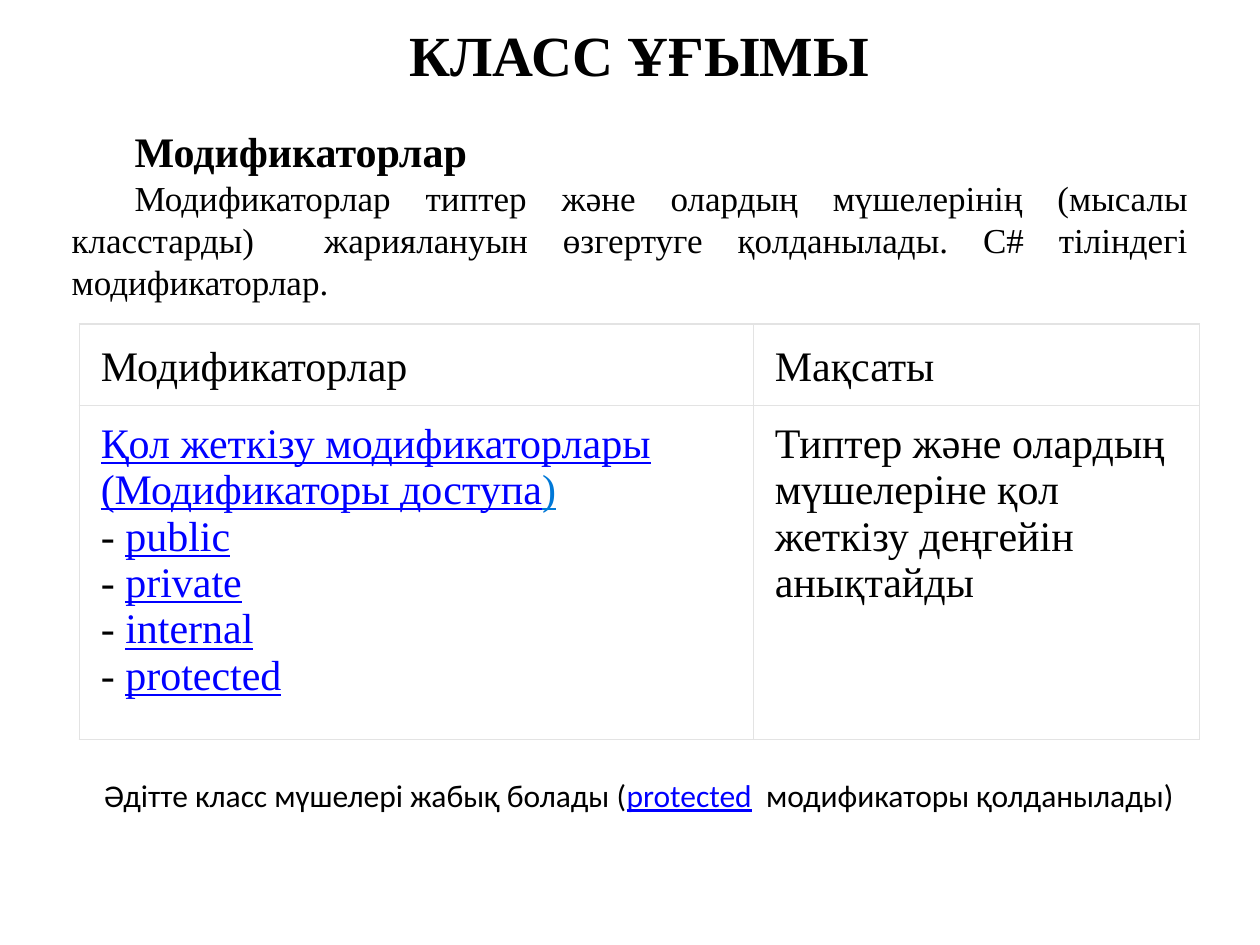
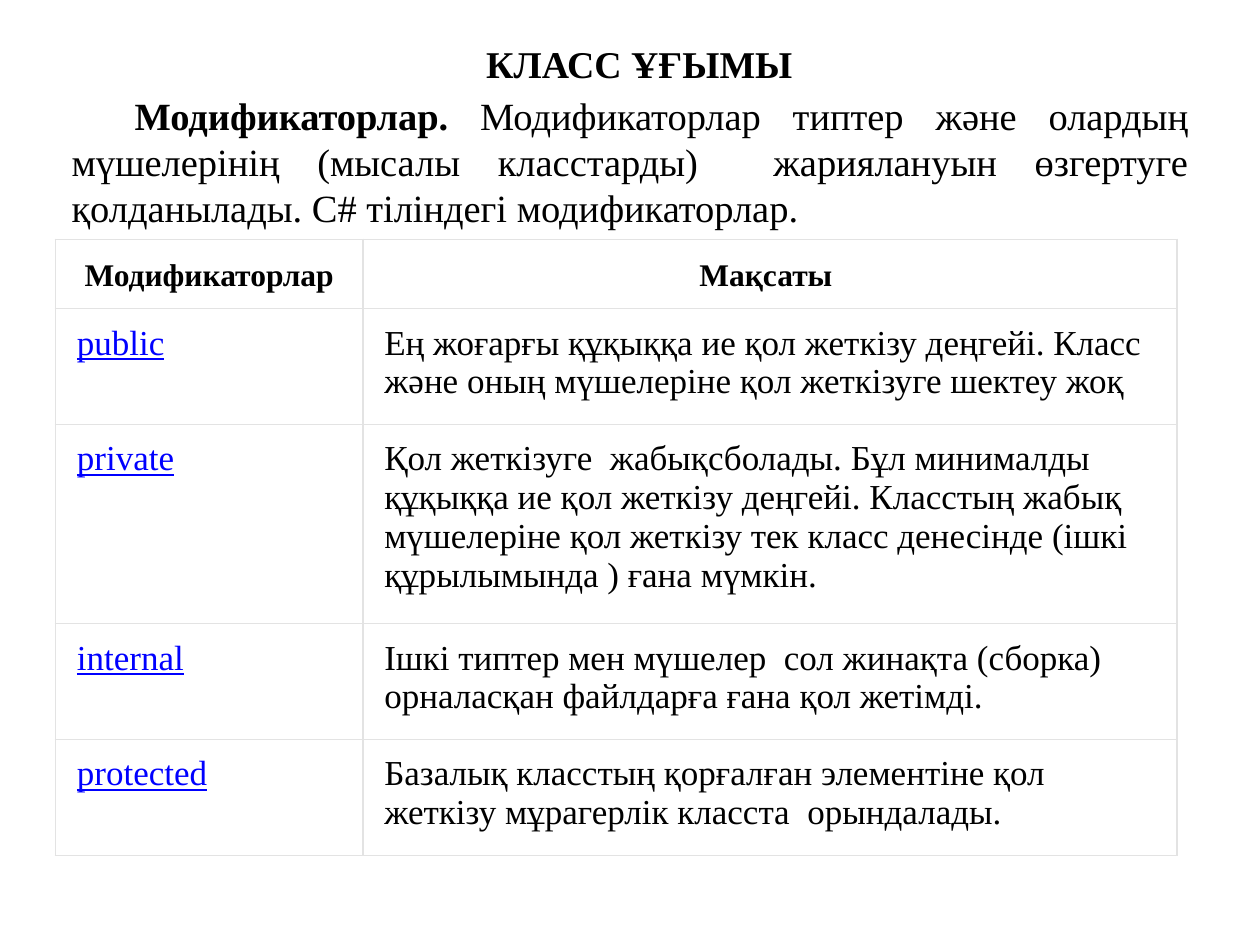
import pptx
import pptx.util
import pptx.dml.color
import pptx.enum.text
import pptx.oxml
import pptx.oxml.ns

COLORS = {
    "text": "000000",
    "link": "0000FF",
    "bracket": "0078D7",
    "cell": "FFFFFF",
    "border": "E3E3E3",
}
SERIF = "Times New Roman"
SANS = "Calibri"
ALIGN = pptx.enum.text.PP_ALIGN
ANCHOR = pptx.enum.text.MSO_ANCHOR
FIT = pptx.enum.text.MSO_AUTO_SIZE

HEADING = "КЛАСС ҰҒЫМЫ"
MODIFIERS = "Модификаторлар"
PURPOSE = "Мақсаты"
INTRO = ("Модификаторлар типтер және олардың мүшелерінің (мысалы класстарды)  "
         "жариялануын өзгертуге қолданылады. C# тіліндегі модификаторлар. ")
ACCESS_LEVELS = {
    "public": "Ең жоғарғы құқыққа ие қол жеткізу деңгейі. Класс және оның "
              "мүшелеріне қол жеткізуге шектеу жоқ",
    "private": "Қол жеткізуге  жабықсболады. Бұл минималды құқыққа ие қол жеткізу "
               "деңгейі. Класстың жабық мүшелеріне қол жеткізу тек класс денесінде "
               "(ішкі құрылымында ) ғана мүмкін.",
    "internal": "Ішкі типтер мен мүшелер  сол жинақта (сборка) орналасқан "
                "файлдарға ғана қол жетімді.",
    "protected": "Базалық класстың қорғалған элементіне қол жеткізу мұрагерлік "
                 "класста  орындалады.",
}


class Deck:
    """Builds styled slides on a grid of 100 columns by 75 rows."""

    def __init__(self):
        self.show = pptx.Presentation()
        self.show.slide_width = pptx.util.Inches(10)
        self.show.slide_height = pptx.util.Inches(7.5)
        self.slide = None

    def across(self, columns):
        return round(self.show.slide_width * columns / 100)

    def down(self, rows):
        return round(self.show.slide_height * rows / 75)

    def box(self, at):
        left, top, width, height = at
        return self.across(left), self.down(top), self.across(width), self.down(height)

    def runs(self, paragraph, parts, size, font=SERIF):
        for text, look in parts:
            for number, line in enumerate(text.split("\n")):
                if number:
                    paragraph.add_line_break()
                if not line:
                    continue
                run = paragraph.add_run()
                run.text = line
                run.font.size = pptx.util.Pt(size)
                run.font.name = font
                run.font.bold = look == "bold"
                run.font.underline = look in ("link", "bracket")
                run.font.color.rgb = pptx.dml.color.RGBColor.from_string(
                    COLORS.get(look, COLORS["text"]))

    def new_slide(self, top, height, size):
        self.slide = self.show.slides.add_slide(self.show.slide_layouts[5])
        title = self.slide.shapes.title
        title.left, title.top, title.width, title.height = self.box((3.1, top, 95.3, height))
        frame = title.text_frame
        frame.auto_size = FIT.NONE
        frame.vertical_anchor = ANCHOR.TOP
        heading = frame.paragraphs[0]
        heading.alignment = ALIGN.CENTER
        self.runs(heading, [(HEADING, "bold")], size)

    def text(self, at, paragraphs, font=SERIF, indent=0):
        frame = self.slide.shapes.add_textbox(*self.box(at)).text_frame
        frame.word_wrap = True
        frame.auto_size = FIT.SHAPE_TO_FIT_TEXT
        for number, (parts, size, align) in enumerate(paragraphs):
            paragraph = frame.add_paragraph() if number else frame.paragraphs[0]
            paragraph.alignment = align
            paragraph._p.get_or_add_pPr().set("indent", str(self.across(indent)))
            self.runs(paragraph, parts, size, font)

    def border(self, cell, side, points):
        line = pptx.oxml.parse_xml(
            f'<a:{side} {pptx.oxml.ns.nsdecls("a")} w="{pptx.util.Pt(points)}">'
            f'<a:solidFill><a:srgbClr val="{COLORS["border"]}"/></a:solidFill></a:{side}>')
        properties = cell._tc.get_or_add_tcPr()
        properties.insert(("lnL", "lnR", "lnT", "lnB").index(side), line)

    def table(self, left, top, columns, heights, rows, sizes, header_align):
        at = self.box((left, top, sum(columns), sum(heights)))
        grid = self.slide.shapes.add_table(len(rows), len(columns), *at).table
        grid.first_row = grid.horz_banding = False
        for column, width in zip(grid.columns, columns):
            column.width = self.across(width)
        last = len(rows) - 1
        for r, (height, row) in enumerate(zip(heights, rows)):
            grid.rows[r].height = self.down(height)
            for c, parts in enumerate(row):
                cell = grid.cell(r, c)
                cell.fill.solid()
                cell.fill.fore_color.rgb = pptx.dml.color.RGBColor.from_string(COLORS["cell"])
                cell.margin_left = cell.margin_right = self.across(1.7)
                cell.margin_top = cell.margin_bottom = self.down(1.2)
                cell.vertical_anchor = ANCHOR.TOP if r else ANCHOR.BOTTOM
                paragraph = cell.text_frame.paragraphs[0]
                paragraph.alignment = ALIGN.LEFT if r else header_align
                self.runs(paragraph, parts, sizes[min(r, 1)])
                self.border(cell, "lnL", 1)
                self.border(cell, "lnR", 1)
                self.border(cell, "lnT", 0.75 if r else 1)
                self.border(cell, "lnB", 1 if r == last else 0.75)


def modifiers_slide(deck):
    deck.new_slide(1.1, 5.7, 32.4)
    deck.text((4.7, 9.5, 90.6, 15.1), [
        ([(MODIFIERS, "bold")], 24, ALIGN.LEFT),
        ([(INTRO, "text")], 20, ALIGN.JUSTIFY),
    ], indent=5)
    access = [("Қол жеткізу модификаторлары (Модификаторы доступа", "link"), (")", "bracket")]
    for keyword in ACCESS_LEVELS:
        access += [("\n- ", "text"), (keyword, "link")]
    purpose = "Типтер және олардың мүшелеріне қол жеткізу деңгейін анықтайды"
    deck.table(6.3, 25.7, (53.5, 35.4), (6.5, 26.5), [
        ([(MODIFIERS, "text")], [(PURPOSE, "text")]),
        (access, [(purpose, "text")]),
    ], (24, 24), ALIGN.LEFT)
    deck.text((6.7, 61.1, 88.6, 4), [
        ([(" Әдітте класс мүшелері жабық болады (", "text"), ("protected", "link"),
          ("  модификаторы қолданылады)", "text")], 18, ALIGN.LEFT),
    ], font=SANS)


def access_levels_slide(deck):
    deck.new_slide(2.7, 4.1, 21.6)
    deck.text((4.7, 6.8, 90.6, 12.1), [
        ([(MODIFIERS + ". ", "bold"), (INTRO, "text")], 22, ALIGN.JUSTIFY),
    ], indent=5)
    rows = [([(MODIFIERS, "bold")], [(PURPOSE + " ", "bold")])]
    rows += [([(keyword, "link")], [(meaning, "text")])
             for keyword, meaning in ACCESS_LEVELS.items()]
    deck.table(4.4, 19, (24.4, 64.6), (5.5, 9.2, 15.8, 9.2, 9.2), rows,
               (18, 20), ALIGN.CENTER)


def main():
    deck = Deck()
    modifiers_slide(deck)
    access_levels_slide(deck)
    deck.show.save("out.pptx")


if __name__ == "__main__":
    main()
